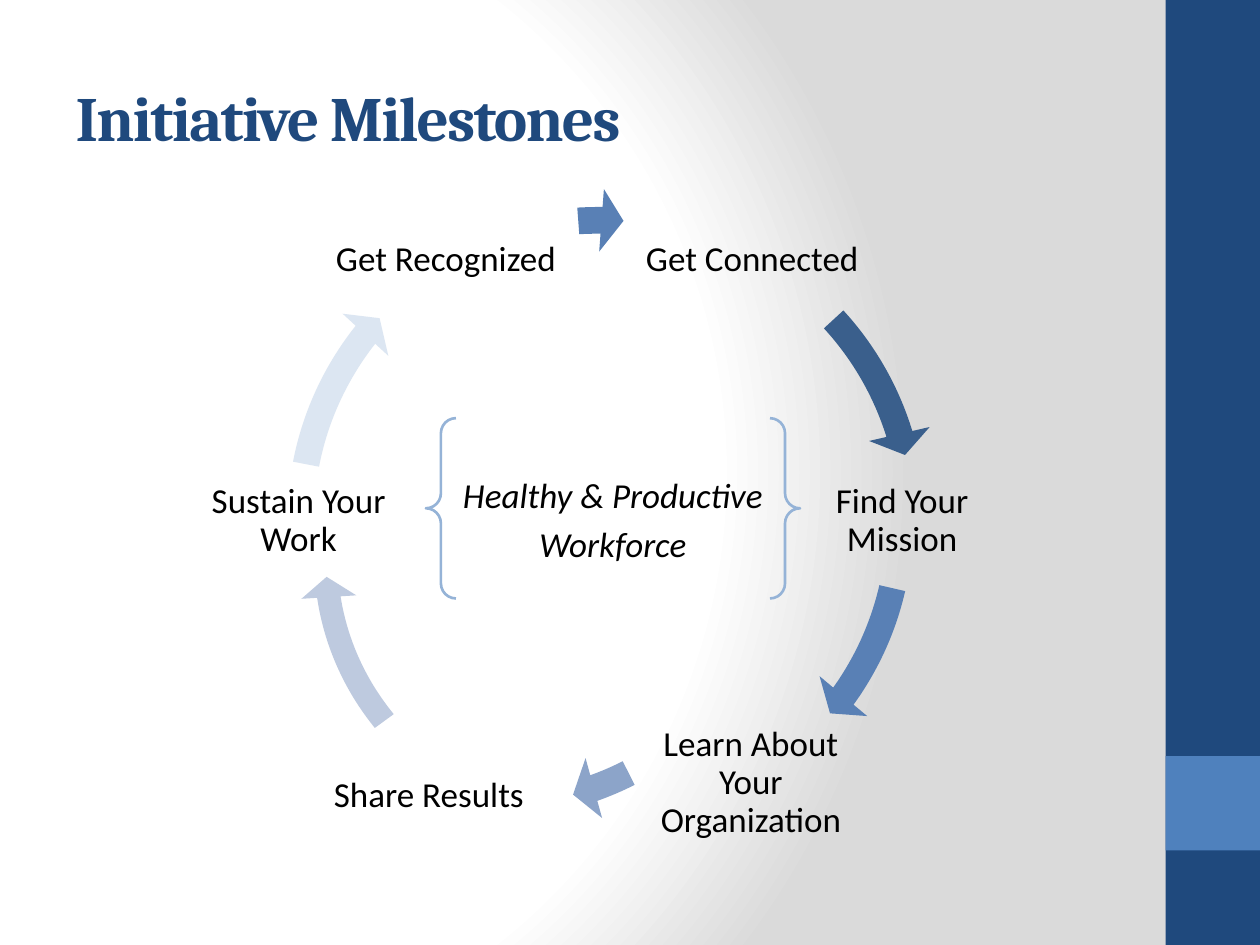
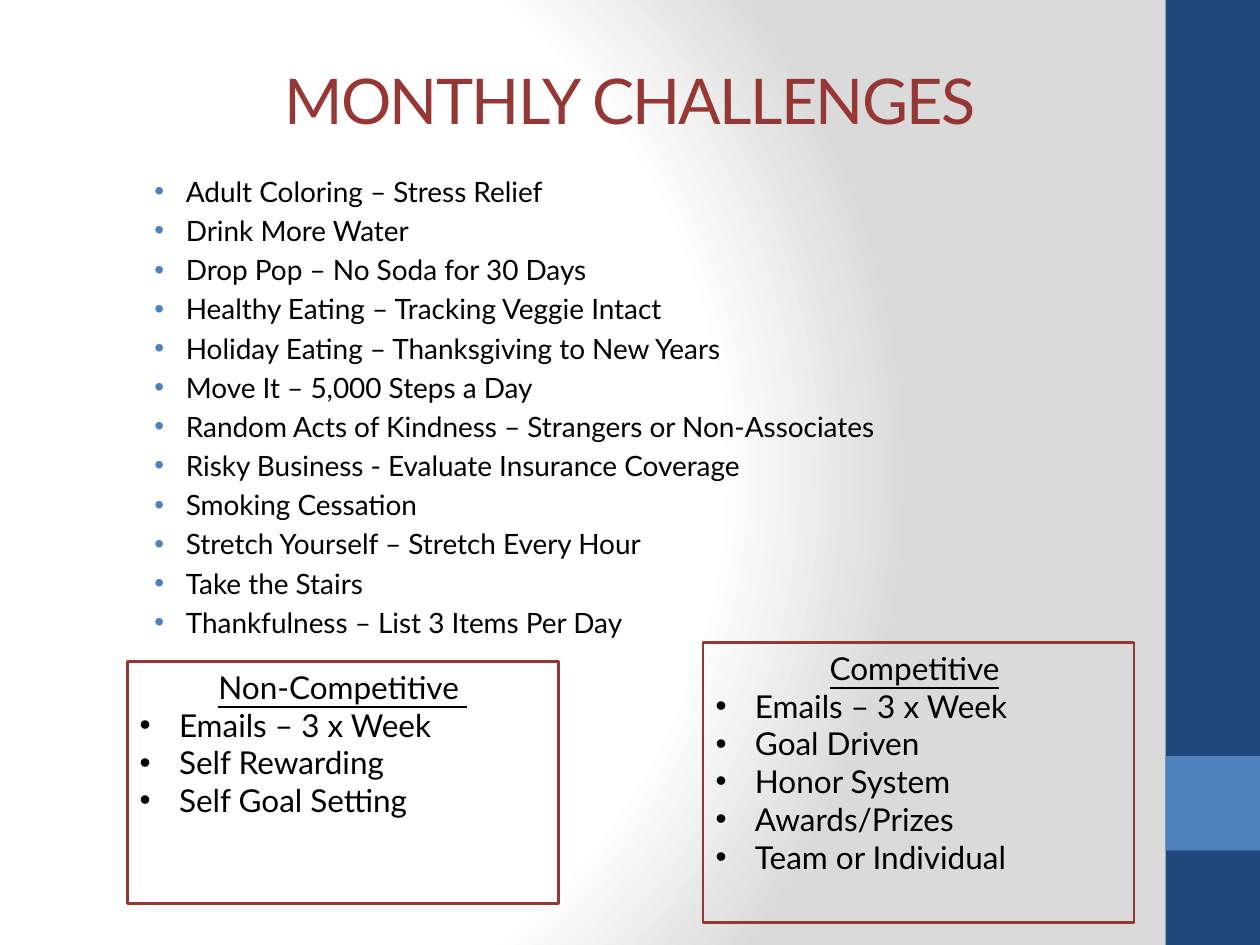
"""Build two slides: a ring of initiative milestones and a list of monthly challenges."""
from pptx import Presentation
from pptx.dml.color import RGBColor
from pptx.enum import shapes, text
from pptx.oxml import parse_xml
from pptx.oxml.ns import nsdecls, qn
from pptx.util import Pt

NAVY = RGBColor(0x1F, 0x49, 0x7D)
BLUE = RGBColor(0x4F, 0x81, 0xBD)
PALE_BLUE = RGBColor(0x95, 0xB3, 0xD7)
RED = RGBColor(0x95, 0x37, 0x35)
BLACK = RGBColor(0, 0, 0)
DEEP_STEP = RGBColor(0x3A, 0x5F, 0x8C)
STRONG_STEP = RGBColor(0x59, 0x80, 0xB5)
MEDIUM_STEP = RGBColor(0x8C, 0xA4, 0xC9)
SOFT_STEP = RGBColor(0xBE, 0xCA, 0xDF)
FAINT_STEP = RGBColor(0xDC, 0xE6, 0xF2)

SLIDE_SIZE = (720, 540)
BANDS = [((666, 0, 54, 540), NAVY), ((666, 432, 54, 54), BLUE)]
BACKDROP_STOPS = [(0, "FFFFFF"), (75, "FFFFFF"), (100, "DADADA")]

GOAL = "Healthy & Productive Workforce"
GOAL_BOX = (243.4, 239, 213.8, 103)
# label, label box, arrow box, arrow head and tail angles, arrow colour
MILESTONES = [
    ("Get Connected", (356.4, 115.9, 147, 65.5),
     (161.3, 109.4, 378, 378), (205.73, 190.45), DEEP_STEP),
    ("Find Your Mission", (460, 259.2, 111, 77),
     (154, 108.7, 378, 378), (21.46, 7.77), STRONG_STEP),
    ("Learn About Your Organization", (362.9, 409, 132.5, 77),
     (92.9, 100, 378, 378), (42.24, 37.88), MEDIUM_STEP),
    ("Share Results", (159.8, 422, 170.6, 65.5),
     (170.6, 152.6, 351.4, 334), (103.34, 86.33), SOFT_STEP),
    ("Sustain Your Work", (97.2, 265, 147, 65.5),
     (154, 108.7, 378, 378), (131.05, 114.55), FAINT_STEP),
    ("Get Recognized ", (183.6, 115.9, 147, 65.5),
     (119.5, 108, 447.8, 381), (162.07, 159.42), STRONG_STEP),
]

CHALLENGES = [
    "Adult Coloring – Stress Relief",
    "Drink More Water",
    "Drop Pop – No Soda for 30 Days",
    "Healthy Eating – Tracking Veggie Intact",
    "Holiday Eating – Thanksgiving to New Years",
    "Move It – 5,000 Steps a Day",
    "Random Acts of Kindness – Strangers or Non-Associates",
    "Risky Business - Evaluate Insurance Coverage",
    "Smoking Cessation",
    "Stretch Yourself – Stretch Every Hour",
    "Take the Stairs",
    "Thankfulness – List 3 Items Per Day",
]
# box, underlined heading, plain ending of the heading, points
FORMATS = [
    ((72.7, 378, 246.3, 138.2), "Non-Competitive ", "",
     ["Emails – 3 x Week", "Self Rewarding", "Self Goal Setting"]),
    ((401.8, 367.2, 246.3, 160), "Competitive", " ",
     ["Emails – 3 x Week", "Goal Driven", "Honor System",
      "Awards/Prizes", "Team or Individual"]),
]


def points(box):
    return [Pt(length) for length in box]


def style(paragraph, font, size, color=BLACK, align=None, **flags):
    paragraph.alignment = align
    for run in paragraph.runs:
        run.font.name, run.font.size = font, Pt(size)
        run.font.color.rgb = color
        for flag, value in flags.items():
            setattr(run.font, flag, value)


def bullet(paragraph, indent, color):
    props = paragraph._p.get_or_add_pPr()
    props.set("marL", str(Pt(indent[0])))
    props.set("indent", str(Pt(indent[1])))
    for part in (f'<a:buClr {nsdecls("a")}><a:srgbClr val="{color}"/></a:buClr>',
                 f'<a:buFont {nsdecls("a")} typeface="Arial"/>',
                 f'<a:buChar {nsdecls("a")} char="•"/>'):
        props.append(parse_xml(part))


def add_shape(slide, preset, box, fill=None, line=None):
    shape = slide.shapes.add_shape(preset, *points(box))
    shape.shadow.inherit = False
    if fill is None:
        shape.fill.background()
    else:
        shape.fill.solid()
        shape.fill.fore_color.rgb = fill
    if line is None:
        shape.line.fill.background()
    else:
        shape.line.color.rgb = line
        shape.line.width = Pt(1.5)
    return shape


def place(placeholder, box):
    placeholder.left, placeholder.top, placeholder.width, placeholder.height = points(box)
    placeholder.text_frame.auto_size = text.MSO_AUTO_SIZE.NONE


def set_backdrop(master):
    master.background.fill.gradient()
    gradient = master.element.find(".//" + qn("a:gradFill"))
    stops = "".join(f'<a:gs pos="{at * 1000}"><a:srgbClr val="{color}"/></a:gs>'
                    for at, color in BACKDROP_STOPS)
    gradient.getparent().replace(gradient, parse_xml(
        f'<a:gradFill {nsdecls("a")} rotWithShape="1"><a:gsLst>{stops}</a:gsLst>'
        '<a:path path="circle"><a:fillToRect l="20000" t="50000" r="100000" b="50000"/>'
        '</a:path></a:gradFill>'))


def add_slide(deck, layout, title, box, font, color, align, bold):
    slide = deck.slides.add_slide(deck.slide_layouts[layout])
    for band, fill in BANDS:
        add_shape(slide, shapes.MSO_SHAPE.RECTANGLE, band, fill)
    heading = slide.shapes.title
    place(heading, box)
    heading.text_frame.text = title
    heading.text_frame.vertical_anchor = text.MSO_ANCHOR.MIDDLE
    paragraph = heading.text_frame.paragraphs[0]
    style(paragraph, font, 36, color, align, bold=bold)
    paragraph.runs[0]._r.get_or_add_rPr().set("spc", "-100")
    return slide


def add_milestone(slide, name, label_box, arrow_box, angles, color):
    label = slide.shapes.add_textbox(*points(label_box)).text_frame
    label.word_wrap = True
    label.vertical_anchor = text.MSO_ANCHOR.MIDDLE
    label.margin_left = label.margin_right = label.margin_top = label.margin_bottom = Pt(2)
    label.text = name
    label.paragraphs[0].line_spacing = 0.9
    style(label.paragraphs[0], "Calibri", 20, align=text.PP_ALIGN.CENTER)
    arrow = add_shape(slide, shapes.MSO_SHAPE.CIRCULAR_ARROW, arrow_box, color)
    for index, value in enumerate((0.04, 2.5, *angles, 0.047)):
        arrow.adjustments[index] = value


def add_goal(slide):
    goal = add_shape(slide, shapes.MSO_SHAPE.DOUBLE_BRACE, GOAL_BOX, line=PALE_BLUE).text_frame
    goal.vertical_anchor = text.MSO_ANCHOR.MIDDLE
    goal.text = GOAL
    paragraph = goal.paragraphs[0]
    paragraph.line_spacing = 1.15
    paragraph.space_after = Pt(10)
    style(paragraph, "Calibri", 20, align=text.PP_ALIGN.CENTER, italic=True)


def add_challenges(slide):
    body = slide.placeholders[1]
    place(body, (72, 96, 576, 300))
    body.text_frame.text = "\n".join(CHALLENGES)
    for index, paragraph in enumerate(body.text_frame.paragraphs):
        bullet(paragraph, (27, -18), BLUE)
        paragraph.space_before = Pt(3.2 if index else 0)
        style(paragraph, "Lato", 16)


def add_format(slide, box, heading, ending, rules):
    frame = add_shape(slide, shapes.MSO_SHAPE.RECTANGLE, box, line=RED).text_frame
    frame.vertical_anchor = text.MSO_ANCHOR.TOP
    frame.text = "\n".join([heading, *rules])
    first, *rest = frame.paragraphs
    style(first, "Lato", 18, align=text.PP_ALIGN.CENTER, underline=True)
    if ending:
        tail = first.add_run()
        tail.text = ending
        tail.font.name, tail.font.size = "Lato", Pt(18)
    for paragraph in rest:
        bullet(paragraph, (22.5, -22.5), BLACK)
        style(paragraph, "Lato", 18, align=text.PP_ALIGN.LEFT)


def main():
    deck = Presentation()
    deck.slide_width, deck.slide_height = points(SLIDE_SIZE)
    set_backdrop(deck.slide_master)

    milestones = add_slide(deck, 5, "Initiative Milestones", (36, 21.6, 600, 90),
                           "Cambria", NAVY, text.PP_ALIGN.LEFT, True)
    for milestone in MILESTONES:
        add_milestone(milestones, *milestone)
    add_goal(milestones)

    challenges = add_slide(deck, 1, "MONTHLY CHALLENGES", (72, 24, 576, 66),
                           "Lato", RED, text.PP_ALIGN.CENTER, False)
    add_challenges(challenges)
    for challenge_format in FORMATS:
        add_format(challenges, *challenge_format)

    deck.save("out.pptx")


if __name__ == "__main__":
    main()
